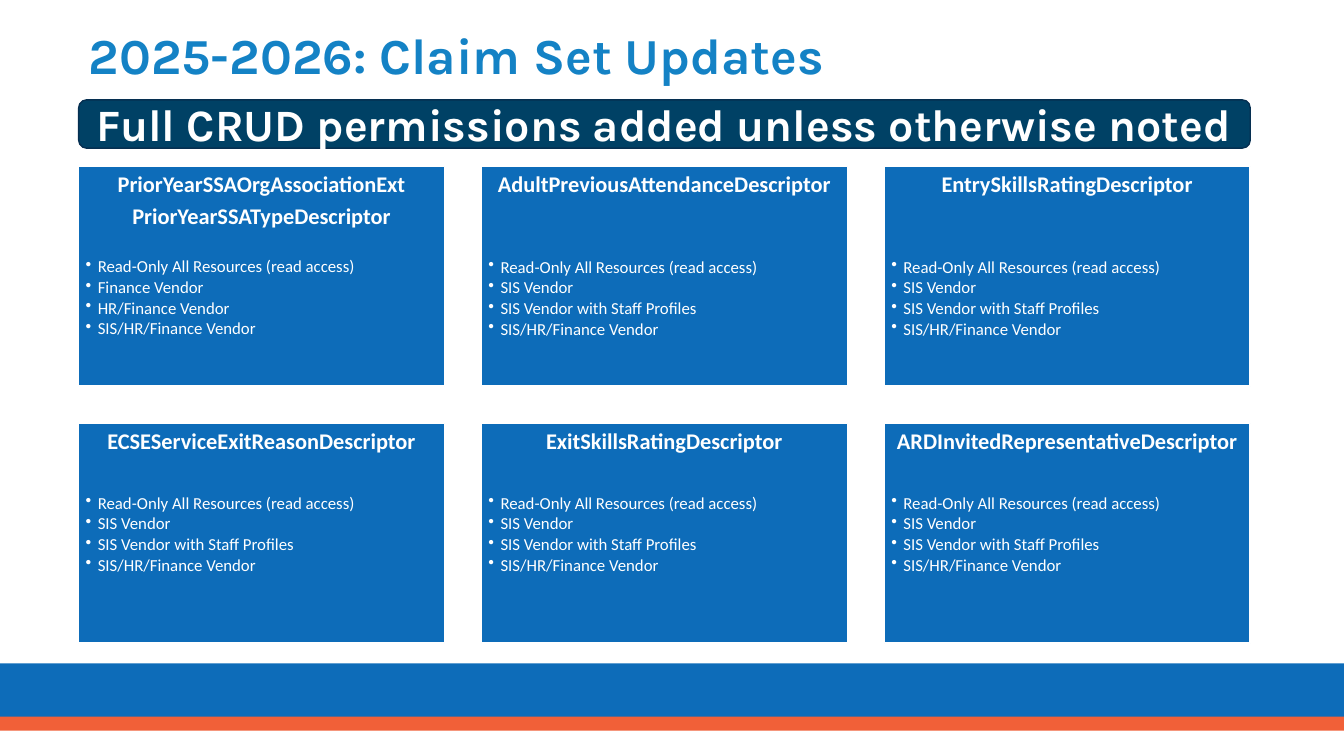
from lxml import etree
from pptx import Presentation
from pptx.dml.color import RGBColor
from pptx.enum.shapes import MSO_SHAPE
from pptx.enum.text import MSO_ANCHOR, PP_ALIGN
from pptx.oxml.ns import qn
from pptx.util import Inches, Pt

WHITE = RGBColor(0xFF, 0xFF, 0xFF)
BLUE = RGBColor(0x0D, 0x6C, 0xB9)
ORANGE = RGBColor(0xF1, 0x60, 0x38)
SKY = RGBColor(0x14, 0x82, 0xC5)
NAVY = RGBColor(0x00, 0x41, 0x65)
EDGE = RGBColor(0x06, 0x2F, 0x51)

LEFT, WIDTH = 0.78, 11.62
CARD_W, CARD_H = 3.63, 2.18
STEP = (WIDTH - CARD_W) / 2

READ = "Read-Only All Resources (read access)"
FINANCE = [READ, "Finance Vendor", "HR/Finance Vendor", "SIS/HR/Finance Vendor"]
STAFF = [READ, "SIS Vendor", "SIS Vendor with Staff Profiles", "SIS/HR/Finance Vendor"]

# Each row: top, then cards as headings, vendors and gap before the list
ROWS = [
    (1.65, [
        (["PriorYearSSAOrgAssociationExt", "PriorYearSSATypeDescriptor"], FINANCE, 15),
        (["AdultPreviousAttendanceDescriptor"], STAFF, 38),
        (["EntrySkillsRatingDescriptor"], STAFF, 38),
    ]),
    (4.2, [
        (["ECSEServiceExitReasonDescriptor"], STAFF, 23),
        (["ExitSkillsRatingDescriptor"], STAFF, 23),
        (["ARDInvitedRepresentativeDescriptor"], STAFF, 23),
    ]),
]

deck = Presentation()
deck.slide_width, deck.slide_height = Inches(13.33), Inches(7.5)
slide = deck.slides.add_slide(deck.slide_layouts[5])


def add_box(kind, left, top, width, height, fill, line=None):
    box = slide.shapes.add_shape(
        kind, Inches(left), Inches(top), Inches(width), Inches(height))
    box.shadow.inherit = False
    box.fill.solid()
    box.fill.fore_color.rgb = fill
    if line is None:
        box.line.fill.background()
    else:
        box.line.color.rgb = line
        box.line.width = Pt(1)
    return box


def style(para, name, size, color, bold=True):
    for run in para.runs:
        run.font.name = name
        run.font.size = Pt(size)
        run.font.bold = bold
        run.font.color.rgb = color


# Footer bands
add_box(MSO_SHAPE.RECTANGLE, 0, 6.58, 13.33, 0.58, BLUE)
add_box(MSO_SHAPE.RECTANGLE, 0, 7.11, 13.33, 0.14, ORANGE)

# Title
title = slide.shapes.title
title.left, title.top = Inches(LEFT), Inches(0.17)
title.width, title.height = Inches(12.16), Inches(0.82)
title.text_frame.text = "2025-2026: Claim Set Updates"
title.text_frame.vertical_anchor = MSO_ANCHOR.MIDDLE
para = title.text_frame.paragraphs[0]
para.alignment = PP_ALIGN.LEFT
para.line_spacing = 0.9
style(para, "Karla", 36, SKY)

# Cards
for top, cards in ROWS:
    for col, (heads, vendors, gap) in enumerate(cards):
        card = add_box(MSO_SHAPE.RECTANGLE, LEFT + col * STEP, top,
                       CARD_W, CARD_H, BLUE, WHITE)
        frame = card.text_frame
        frame.word_wrap = True
        frame.vertical_anchor = MSO_ANCHOR.TOP
        frame.margin_left = frame.margin_right = Inches(0.07)
        frame.margin_top = frame.margin_bottom = Inches(0.07)
        frame.text = "\n".join(heads + vendors)
        for i, para in enumerate(frame.paragraphs):
            para.line_spacing = 0.9
            if i < len(heads):
                para.alignment = PP_ALIGN.CENTER
                para.space_after = Pt(5.6)
                style(para, "Calibri", 16, WHITE)
                continue
            para.alignment = PP_ALIGN.LEFT
            para.level = 1
            para.space_before = Pt(gap if i == len(heads) else 0)
            para.space_after = Pt(1.8)
            props = para._p.get_or_add_pPr()
            props.set("marL", str(Inches(0.12)))
            props.set("indent", str(-Inches(0.12)))
            etree.SubElement(props, qn("a:buChar")).set("char", "•")
            style(para, "Calibri", 12, WHITE, False)

# Banner
banner = add_box(MSO_SHAPE.ROUNDED_RECTANGLE, LEFT, 0.99, WIDTH, 0.48, NAVY, EDGE)
banner.text_frame.text = "Full CRUD permissions added unless otherwise noted"
banner.text_frame.word_wrap = True
banner.text_frame.vertical_anchor = MSO_ANCHOR.MIDDLE
para = banner.text_frame.paragraphs[0]
para.alignment = PP_ALIGN.CENTER
style(para, "Karla", 32, WHITE)

deck.save("out.pptx")
